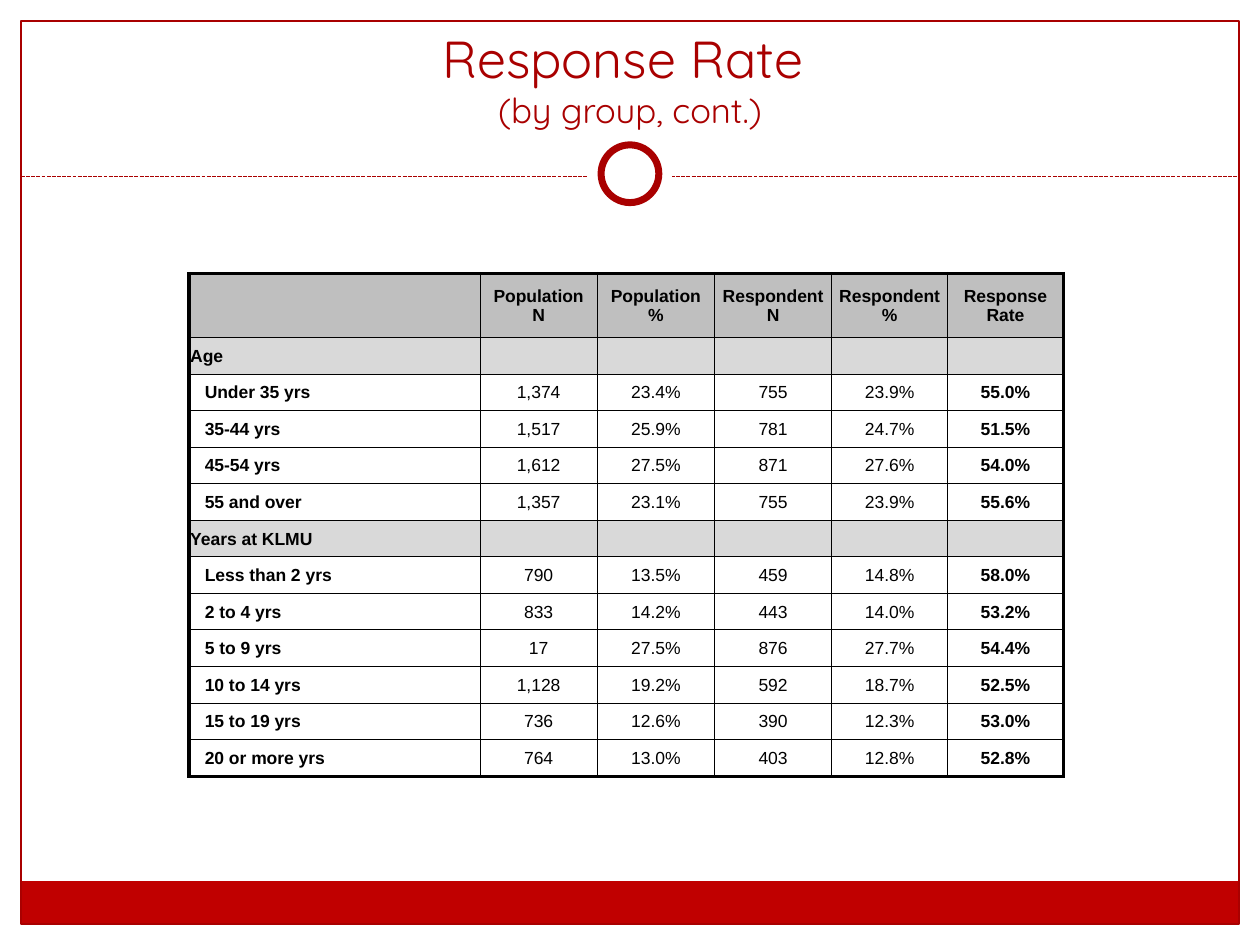
from lxml.etree import SubElement
from pptx import Presentation
from pptx.dml.color import RGBColor
from pptx.enum.dml import MSO_LINE
from pptx.enum.shapes import MSO_CONNECTOR, MSO_SHAPE
from pptx.enum.text import MSO_ANCHOR as ANCHOR, MSO_AUTO_SIZE, PP_ALIGN as ALIGN
from pptx.oxml.ns import qn
from pptx.util import Pt

RED, BAR_RED, WHITE, BLACK = "A90000", "C00000", "FFFFFF", "000000"
HEADER_GREY, GROUP_GREY = "BFBFBF", "D9D9D9"
COL_WIDTHS = [166.3, 67, 67, 67, 66.2, 66.2]
HEADER_HEIGHT, ROW_HEIGHT = 36.6, 20.9
HEADER = ["", "Population\vN", "Population\v%", "Respondent\vN",
          "Respondent\v%", "Response\vRate"]
GROUPS = {
    "Age": [
        ["Under 35 yrs", "1,374", "23.4%", "755", "23.9%", "55.0%"],
        ["35-44 yrs", "1,517", "25.9%", "781", "24.7%", "51.5%"],
        ["45-54 yrs", "1,612", "27.5%", "871", "27.6%", "54.0%"],
        ["55 and over", "1,357", "23.1%", "755", "23.9%", "55.6%"],
    ],
    "Years at KLMU": [
        ["Less than 2 yrs", "790", "13.5%", "459", "14.8%", "58.0%"],
        ["2 to 4 yrs", "833", "14.2%", "443", "14.0%", "53.2%"],
        ["5 to 9 yrs", "17", "27.5%", "876", "27.7%", "54.4%"],
        ["10 to 14 yrs", "1,128", "19.2%", "592", "18.7%", "52.5%"],
        ["15 to 19 yrs", "736", "12.6%", "390", "12.3%", "53.0%"],
        ["20 or more yrs", "764", "13.0%", "403", "12.8%", "52.8%"],
    ],
}


def rgb(value):
    """Return the colour for a hex string."""
    return RGBColor.from_string(value)


def add_box(s, kind, box, fill=None, line=None, width=0.75):
    """Add a preset shape with a plain fill and outline."""
    sp = s.shapes.add_shape(kind, *map(Pt, box))
    sp.shadow.inherit = False
    if fill:
        sp.fill.solid()
        sp.fill.fore_color.rgb = rgb(fill)
    else:
        sp.fill.background()
    if line:
        sp.line.color.rgb = rgb(line)
        sp.line.width = Pt(width)
    else:
        sp.line.fill.background()


def add_frame(s, box, rule_y, bar_height):
    """Draw the page border, footer bar, dashed rule and ring."""
    left, top, width, height = box
    bar = (left, top + height - bar_height, width, bar_height)
    add_box(s, MSO_SHAPE.RECTANGLE, bar, fill=BAR_RED)
    add_box(s, MSO_SHAPE.RECTANGLE, box, line=RED)
    rule = s.shapes.add_connector(MSO_CONNECTOR.STRAIGHT, Pt(left), Pt(rule_y),
                                  Pt(left + width), Pt(rule_y))
    rule.line.color.rgb = rgb(RED)
    rule.line.width = Pt(0.75)
    rule.line.dash_style = MSO_LINE.SQUARE_DOT
    SubElement(rule.element.spPr, qn("a:effectLst"))
    center_x, center_y = left + width / 2, rule_y - 1.5
    for size, line in ((48, None), (33, RED)):
        ring = (center_x - size / 2, center_y - size / 2, size, size)
        add_box(s, MSO_SHAPE.OVAL, ring, fill=WHITE, line=line, width=4)


def add_title(s, box, heading, subheading):
    """Place the two-line title in its placeholder."""
    title = s.shapes.title
    title.left, title.top, title.width, title.height = map(Pt, box)
    tf = title.text_frame
    tf.word_wrap = True
    tf.auto_size = MSO_AUTO_SIZE.NONE
    tf.vertical_anchor = ANCHOR.BOTTOM
    p = tf.paragraphs[0]
    p.alignment = ALIGN.CENTER
    p.line_spacing = 1
    p.font.name = "Quicksand"
    p.font.color.rgb = rgb(RED)
    for text, size in ((heading, 29.7), (subheading, 19.8)):
        if p.runs:
            p.add_line_break()
        r = p.add_run()
        r.text = text
        r.font.size = Pt(size)


def set_borders(cell, widths):
    """Draw black cell borders, given widths for left, right, top and bottom."""
    tc_pr = cell._tc.get_or_add_tcPr()
    for index, (side, width) in enumerate(zip("LRTB", widths)):
        ln = tc_pr.makeelement(qn(f"a:ln{side}"), {"w": str(Pt(width))})
        fill = SubElement(ln, qn("a:solidFill"))
        SubElement(fill, qn("a:srgbClr"), val=BLACK)
        tc_pr.insert(index, ln)


def fill_cell(cell, text, fill, bold, align, indent):
    """Write and format one table cell."""
    cell.fill.solid()
    cell.fill.fore_color.rgb = rgb(fill)
    cell.vertical_anchor = ANCHOR.MIDDLE
    cell.margin_left = Pt(0.72 + indent)
    cell.margin_right = cell.margin_top = Pt(0.72)
    cell.margin_bottom = 0
    cell.text = text
    p = cell.text_frame.paragraphs[0]
    p.alignment = align
    p.font.name, p.font.size, p.font.bold = "Arial", Pt(10), bold
    p.font.color.rgb = rgb(BLACK)
    if not text:
        SubElement(p._p, qn("a:endParaRPr"), sz="1000")


def add_rate_table(s, left, top):
    """Build the response table from the header and the groups."""
    rows = [(HEADER, HEADER_GREY)]
    for group, members in GROUPS.items():
        rows.append(([group] + [""] * (len(HEADER) - 1), GROUP_GREY))
        rows += [(member, WHITE) for member in members]
    last_row, last_col = len(rows) - 1, len(HEADER) - 1
    height = HEADER_HEIGHT + ROW_HEIGHT * last_row
    table = s.shapes.add_table(len(rows), len(HEADER), Pt(left), Pt(top),
                               Pt(sum(COL_WIDTHS)), Pt(height)).table
    table.first_row = table.horz_banding = False
    for col, width in zip(table.columns, COL_WIDTHS):
        col.width = Pt(width)
    for i, (values, fill) in enumerate(rows):
        table.rows[i].height = Pt(ROW_HEIGHT if i else HEADER_HEIGHT)
        for j, text in enumerate(values):
            cell = table.cell(i, j)
            bold = i == 0 or j in (0, last_col)
            indent = 8.3 if j == 0 and fill == WHITE else 0
            fill_cell(cell, text, fill, bold, ALIGN.CENTER if j else ALIGN.LEFT, indent)
            edges = (j == 0, j == last_col, i == 0, i == last_row)
            set_borders(cell, [2 if edge else 0.5 for edge in edges])


def main():
    """Build and save the slide."""
    prs = Presentation()
    prs.slide_width, prs.slide_height = Pt(720), Pt(540)
    s = prs.slides.add_slide(prs.slide_layouts[5])
    add_frame(s, (12, 12, 696, 516), rule_y=100.8, bar_height=24.5)
    add_title(s, (24, 18, 672, 60), "Response Rate ", "(by group, cont.)")
    add_rate_table(s, 108, 156.2)
    prs.save("out.pptx")


if __name__ == "__main__":
    main()
